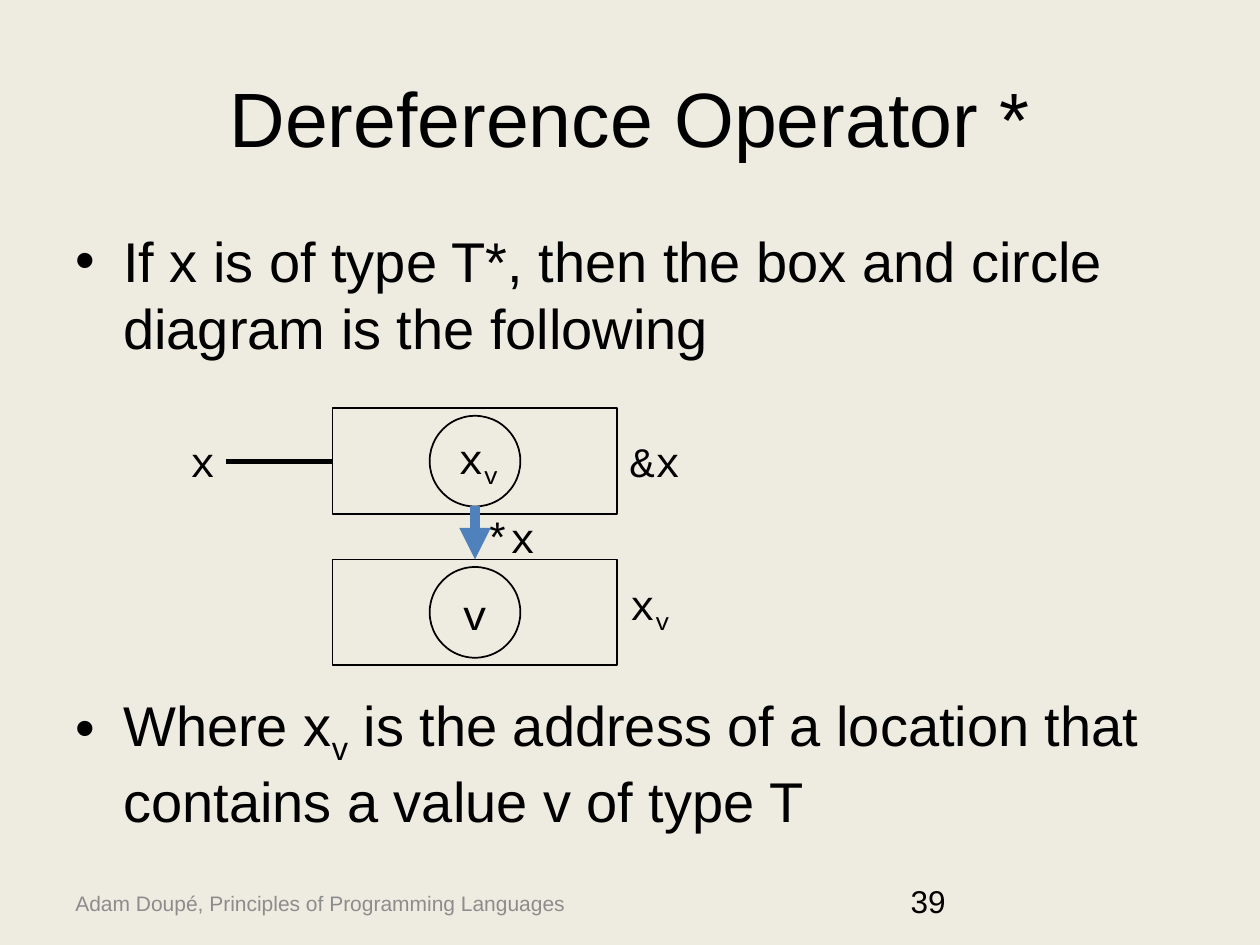
from lxml import etree
from pptx import Presentation
from pptx.dml.color import RGBColor
from pptx.enum.shapes import MSO_CONNECTOR as Connector, MSO_SHAPE as Preset
from pptx.enum.text import MSO_ANCHOR as Anchor, PP_ALIGN as Align
from pptx.oxml.ns import qn
from pptx.util import Emu, Pt

BLACK, GREY, BLUE, CREAM = "000000", "8C8C8C", "4F81BD", "EEECE1"
SANS, MONO = "Arial", "Courier New"
BOX_LEFT, BOX_WIDTH, BOX_HEIGHT = 264, 226, 84
CIRCLE = 72
CENTER = BOX_LEFT + BOX_WIDTH // 2


def px(length):
    """100 px to the inch."""
    return Emu(length * 9144)


def color(hex_code):
    return RGBColor.from_string(hex_code)


def add_runs(para, runs, size, font=SANS, fill=BLACK):
    """Write the runs in turn; one starting with "_" is a subscript."""
    for text in runs:
        span = para.add_run()
        span.text = text.removeprefix("_")
        span.font.name = font
        span.font.size = Pt(size)
        span.font.color.rgb = color(fill)
        if text.startswith("_"):
            span.font._element.set("baseline", "-25000")


def add_text(page, place, runs, size, font=SANS, fill=BLACK, anchor=Anchor.TOP):
    box = page.shapes.add_textbox(*map(px, place))
    box.text_frame.word_wrap = True
    box.text_frame.vertical_anchor = anchor
    add_runs(box.text_frame.paragraphs[0], runs, size, font, fill)


def add_bullet(para, runs, before=0):
    properties = para._p.get_or_add_pPr()
    properties.set("marL", str(px(38)))
    properties.set("indent", str(-px(38)))
    para.space_before = Pt(before)
    etree.SubElement(properties, qn("a:buFont")).set("typeface", SANS)
    etree.SubElement(properties, qn("a:buChar")).set("char", "•")
    add_runs(para, runs, 32)


def add_outline(page, preset, left, top, width, height):
    shape = page.shapes.add_shape(preset, *map(px, (left, top, width, height)))
    shape.shadow.inherit = False
    shape.fill.background()
    shape.line.color.rgb = color(BLACK)
    shape.line.width = Pt(1)
    return shape


def add_cell(page, top):
    """A memory location: a box with a circle in its middle."""
    box = add_outline(page, Preset.RECTANGLE, BOX_LEFT, top, BOX_WIDTH, BOX_HEIGHT)
    add_outline(page, Preset.OVAL, CENTER - CIRCLE // 2,
                top + (BOX_HEIGHT - CIRCLE) // 2, CIRCLE, CIRCLE)
    return box


def add_line(page, start, target, side, end, fill, width, arrow=False):
    line = page.shapes.add_connector(Connector.STRAIGHT, *map(px, start + end))
    line.end_connect(target, side)
    line.line.color.rgb = color(fill)
    line.line.width = Pt(width)
    if arrow:
        etree.SubElement(line.line._get_or_add_ln(), qn("a:tailEnd")).set("type", "triangle")
    etree.SubElement(line._element.spPr, qn("a:effectLst"))


def add_title(page, text):
    title = page.shapes.title
    title.left, title.top, title.width, title.height = map(px, (50, 30, 900, 125))
    title.text_frame.vertical_anchor = Anchor.MIDDLE
    para = title.text_frame.paragraphs[0]
    para.alignment = Align.CENTER
    add_runs(para, [text], 44)


def add_body(page):
    frame = page.shapes.add_textbox(*map(px, (50, 175, 900, 495))).text_frame
    frame.word_wrap = True
    add_bullet(frame.paragraphs[0], [
        "If x is of type T*, then the box and circle diagram is the following"])
    add_bullet(frame.add_paragraph(), [
        "Where x", "_v", " is the address of a location that contains a value v of type T"],
        before=188)


def add_diagram(page):
    pointer = add_cell(page, 324)
    value = add_cell(page, 444)
    add_line(page, (179, 366), pointer, 1, (BOX_LEFT, 366), BLACK, 3)
    labels = [
        ((141, 341, 38, 50), ["x"]),
        ((354, 338, 55, 50), ["x", "_v"]),
        ((357, 462, 39, 50), ["v"]),
        ((490, 454, 55, 50), ["x", "_v"]),
        ((490, 341, 65, 50), ["&x"]),
        ((375, 401, 63, 50), ["*x"]),
    ]
    for place, runs in labels:
        add_text(page, place, runs, 24, MONO)
    add_line(page, (CENTER, 402), value, 0, (CENTER, 444), BLUE, 6, arrow=True)


def main():
    deck = Presentation()
    deck.slide_width, deck.slide_height = px(1000), px(750)
    page = deck.slides.add_slide(deck.slide_layouts[5])
    page.background.fill.solid()
    page.background.fill.fore_color.rgb = color(CREAM)
    add_text(page, (50, 697, 426, 40), ["Adam Doupé, Principles of Programming Languages"],
             12, fill=GREY, anchor=Anchor.MIDDLE)
    add_title(page, "Dereference Operator *")
    add_body(page)
    add_text(page, (713, 695, 233, 40), ["39"], 18)
    add_diagram(page)
    deck.save("out.pptx")


if __name__ == "__main__":
    main()
